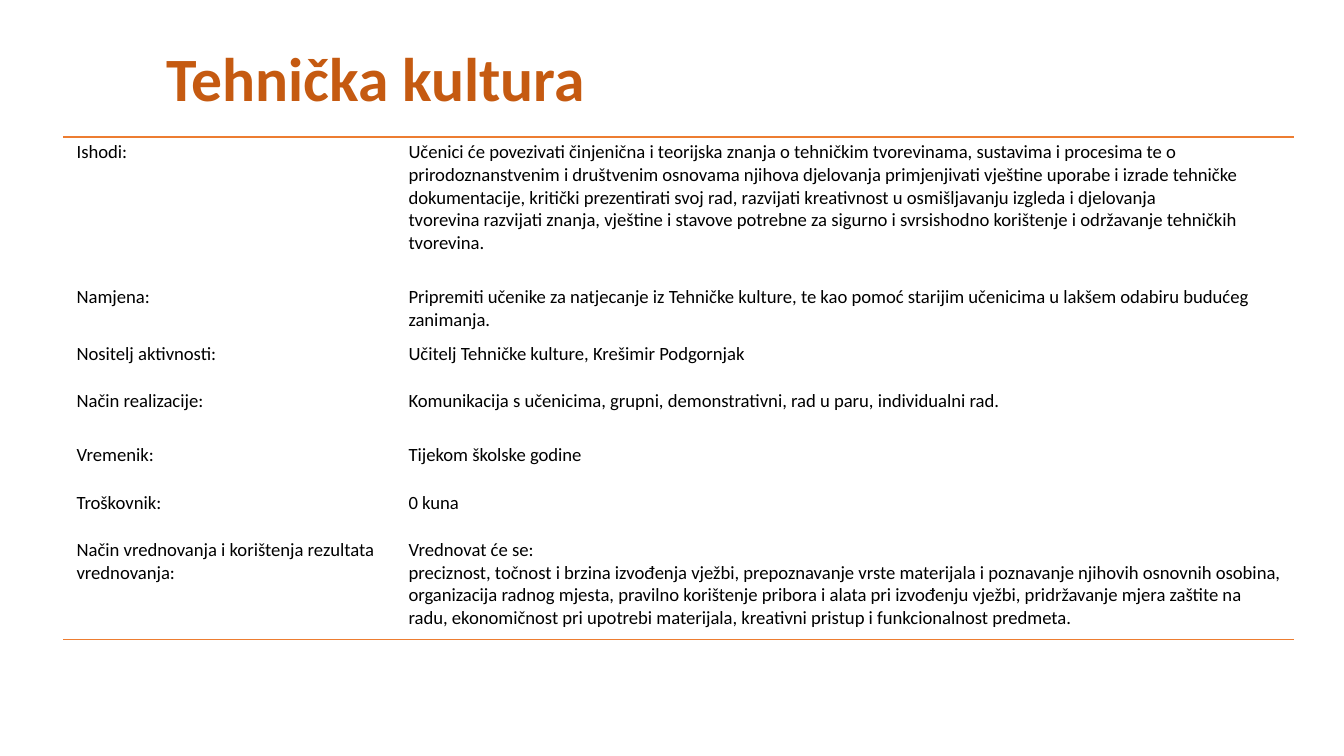
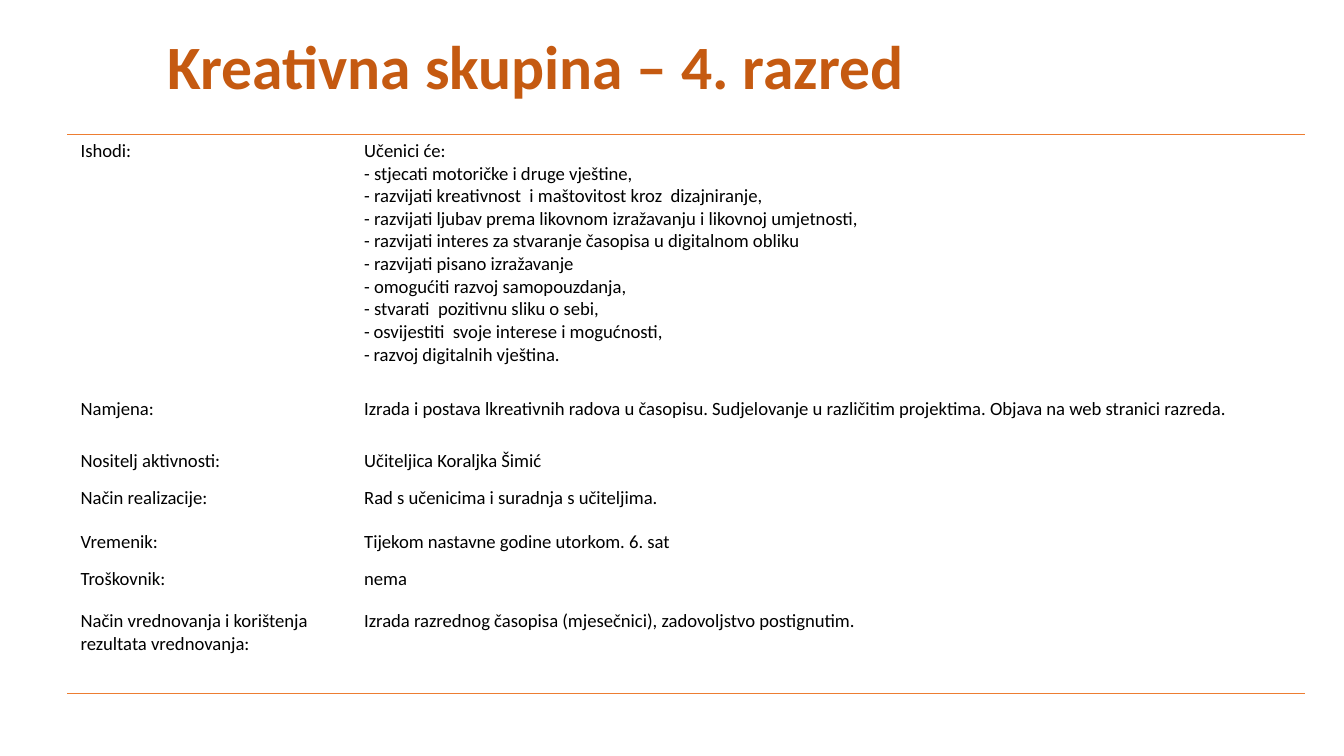
from lxml.etree import SubElement
from pptx import Presentation
from pptx.dml.color import RGBColor
from pptx.enum.text import MSO_ANCHOR
from pptx.oxml import parse_xml
from pptx.oxml.ns import nsdecls, qn
from pptx.util import Inches, Pt

RUST = RGBColor(0xC5, 0x5A, 0x11)
ORANGE = RGBColor(0xED, 0x7D, 0x31)
BLACK = RGBColor(0, 0, 0)
FONT = "Calibri"
DASH = Inches(0.07)
MARK = "* "
TIE = chr(160)
PLAIN = "{2D5ABB26-0587-4C30-8999-92F81FD0307C}"

LABELS = [
    "Ishodi:",
    "Namjena:",
    "Nositelj aktivnosti:",
    "Način realizacije:",
    "Vremenik:",
    "Troškovnik:",
    "Način vrednovanja i korištenja rezultata vrednovanja:",
]

TECH = [
    "Učenici će povezivati činjenična i teorijska znanja o tehničkim tvorevinama, "
    "sustavima i procesima te o prirodoznanstvenim i društvenim osnovama njihova "
    "djelovanja primjenjivati vještine uporabe~i izrade tehničke dokumentacije, "
    "kritički prezentirati svoj rad, razvijati~kreativnost u osmišljavanju izgleda i "
    "djelovanja tvorevina~razvijati znanja, vještine i stavove potrebne za sigurno i "
    "svrsishodno korištenje i održavanje tehničkih tvorevina.",
    "Pripremiti učenike za natjecanje iz Tehničke kulture,~te kao pomoć starijim "
    "učenicima u lakšem odabiru budućeg zanimanja.",
    "Učitelj Tehničke kulture, Krešimir Podgornjak",
    "Komunikacija~s~učenicima, grupni, demonstrativni, rad u paru,~individualni~rad.",
    "Tijekom školske godine",
    "0 kuna",
    "Vrednovat će se:\n"
    "preciznost, točnost i brzina izvođenja vježbi, prepoznavanje vrste materijala i "
    "poznavanje njihovih osnovnih osobina, organizacija radnog mjesta, pravilno "
    "korištenje pribora i alata pri izvođenju vježbi, pridržavanje mjera zaštite na "
    "radu, ekonomičnost pri upotrebi materijala, kreativni pristup i funkcionalnost "
    "predmeta.",
]

CRAFT = [
    "Učenici će:\n"
    "- stjecati motoričke i druge vještine,\n"
    "- razvijati kreativnost~ i maštovitost kroz~ dizajniranje,\n"
    "- razvijati ljubav prema likovnom izražavanju i likovnoj umjetnosti,\n"
    "- razvijati interes za stvaranje časopisa u digitalnom obliku\n"
    "- razvijati pisano izražavanje\n"
    "- omogućiti razvoj samopouzdanja,\n"
    "- stvarati~ pozitivnu sliku~o sebi,\n"
    "* osvijestiti ~svoje interese i mogućnosti,\n"
    "* razvoj digitalnih vještina.",
    "Izrada i postava lkreativnih radova u časopisu. Sudjelovanje u različitim "
    "projektima. Objava na web stranici razreda.",
    "Učiteljica Koraljka Šimić",
    "Rad s učenicima i suradnja s učiteljima.",
    "Tijekom nastavne godine utorkom. 6. sat",
    "nema",
    "Izrada razrednog časopisa (mjesečnici), zadovoljstvo postignutim.",
]


def style(para, size, color, bold=False):
    for run in para.runs:
        font = run.font
        font.name, font.size, font.bold = FONT, Pt(size), bold
        font.color.rgb = color


def add_title(slide, box, text):
    frame = slide.shapes.add_textbox(*map(Inches, box)).text_frame
    frame.word_wrap = True
    frame.vertical_anchor = MSO_ANCHOR.MIDDLE
    frame.text = text
    para = frame.paragraphs[0]
    para.line_spacing = 0.9
    style(para, 33, RUST, True)


def add_rule(cell, side):
    line = parse_xml(
        f'<a:{side} {nsdecls("a")} w="{Pt(1)}"><a:solidFill>'
        f'<a:srgbClr val="{ORANGE}"/></a:solidFill></a:{side}>'
    )
    cell._tc.get_or_add_tcPr().insert(0, line)


def add_dash(para):
    props = para._p.get_or_add_pPr()
    props.set("marL", str(DASH))
    props.set("indent", str(-DASH))
    SubElement(props, qn("a:buFont")).set("typeface", FONT)
    SubElement(props, qn("a:buChar")).set("char", "-")


def fill_cell(cell, text, pad):
    cell.fill.background()
    cell.margin_left = cell.margin_right = Inches(0.1)
    cell.margin_top = cell.margin_bottom = Inches(pad)
    cell.text_frame.text = text.replace("~", TIE)
    for para in cell.text_frame.paragraphs:
        if para.text.startswith(MARK):
            para.text = para.text.removeprefix(MARK)
            add_dash(para)
        style(para, 10, BLACK)


def add_grid(slide, spot, widths, heights, pad, facts):
    box = (*spot, sum(widths), sum(heights))
    grid = slide.shapes.add_table(len(LABELS), 2, *map(Inches, box)).table
    grid.first_row = grid.horz_banding = False
    grid._tbl.tblPr.find(qn("a:tableStyleId")).text = PLAIN
    for col, width in zip(grid.columns, widths):
        col.width = Inches(width)
    for row, height, pair in zip(grid.rows, heights, zip(LABELS, facts)):
        row.height = Inches(height)
        for cell, text in zip(row.cells, pair):
            fill_cell(cell, text, pad)
    for col in range(2):
        add_rule(grid.cell(0, col), "lnT")
        add_rule(grid.cell(len(LABELS) - 1, col), "lnB")


def add_plan(deck, title, box, **grid):
    slide = deck.slides.add_slide(deck.slide_layouts[6])
    add_grid(slide, **grid)
    add_title(slide, box, title)


def main():
    deck = Presentation()
    deck.slide_width = Inches(10)
    deck.slide_height = deck.slide_width * 9 // 16
    add_plan(
        deck, "Tehnička kultura", (1.14, 0.21, 8.39, 0.8),
        spot=(0.47, 1.02), widths=(2.47, 6.69),
        heights=(1.08, 0.42, 0.35, 0.4, 0.36, 0.35, 0.78),
        pad=0.03, facts=TECH,
    )
    add_plan(
        deck, "Kreativna skupina – 4. razred", (1.15, 0.04, 7.47, 0.96),
        spot=(0.5, 1), widths=(2.11, 7.1),
        heights=(1.92, 0.39, 0.27, 0.33, 0.28, 0.31, 0.66),
        pad=0.04, facts=CRAFT,
    )
    deck.save("out.pptx")


if __name__ == "__main__":
    main()
